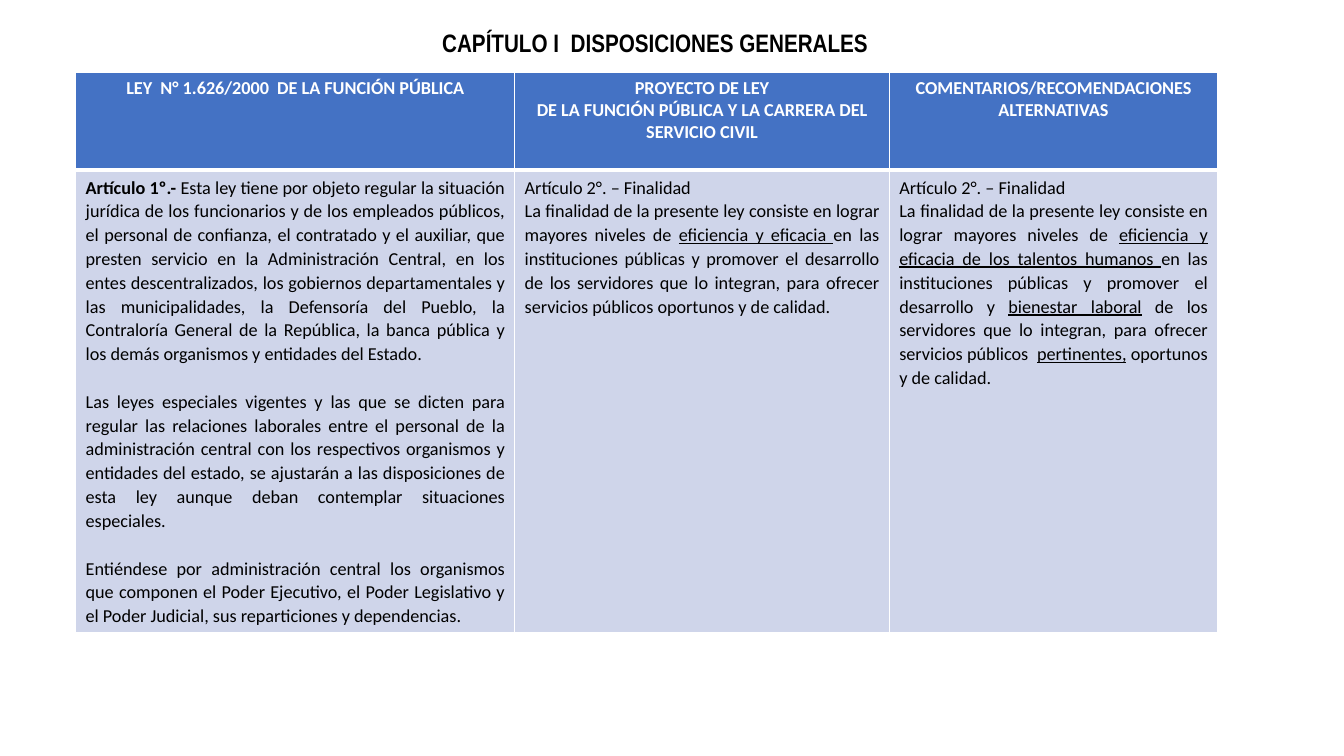
from dataclasses import dataclass

from lxml.etree import SubElement
from pptx import Presentation
from pptx.dml.color import RGBColor
from pptx.enum.text import MSO_ANCHOR as Anchor, PP_ALIGN as Align
from pptx.oxml.ns import qn
from pptx.util import Pt


@dataclass(frozen=True)
class Theme:
    """Colours, fonts and type sizes of the slide."""
    black: str = "000000"
    white: str = "FFFFFF"
    header_fill: str = "4472C4"
    body_fill: str = "CFD5EA"
    title_font: str = "Arial Narrow"
    table_font: str = "Calibri"
    title_size: int = 18
    table_size: int = 13
    line_spacing: int = 17


THEME = Theme()
PLAIN, BOLD, UNDERLINE = "plain", "bold", "underline"

TITLE = "CAPÍTULO I  DISPOSICIONES GENERALES"
COLUMN_WIDTHS = (313.6, 267.6, 234.6)
ROW_HEIGHTS = (70, 330)

HEADERS = (
    ("LEY  N° 1.626/2000  DE LA FUNCIÓN PÚBLICA",),
    ("PROYECTO DE LEY", "DE LA FUNCIÓN PÚBLICA Y LA CARRERA DEL SERVICIO CIVIL"),
    ("COMENTARIOS/RECOMENDACIONES ALTERNATIVAS",),
)

ARTICLE_HEADING = [("Artículo 2°. – Finalidad", PLAIN)]
PURPOSE_START = ("La finalidad de la presente ley consiste en lograr mayores niveles de ", PLAIN)

CURRENT_LAW = (
    [
        ("Artículo 1º.-", BOLD),
        (" Esta ley tiene por objeto regular la situación jurídica de los funcionarios y de los "
         "empleados públicos, el personal de confianza, el contratado y el auxiliar, que presten "
         "servicio en la Administración Central, en los entes descentralizados, los gobiernos "
         "departamentales y las municipalidades, la Defensoría del Pueblo, la Contraloría General "
         "de la República, la banca pública y los demás organismos y entidades del Estado.", PLAIN),
    ],
    [("Las leyes especiales vigentes y las que se dicten para regular las relaciones laborales "
      "entre el personal de la administración central con los respectivos organismos y entidades "
      "del estado, se ajustarán a las disposiciones de esta ley aunque deban contemplar "
      "situaciones especiales.", PLAIN)],
    [("Entiéndese por administración central los organismos que componen el Poder Ejecutivo, el "
      "Poder Legislativo y el Poder Judicial, sus reparticiones y dependencias.", PLAIN)],
)
BILL = (
    ARTICLE_HEADING,
    [
        PURPOSE_START,
        ("eficiencia y eficacia ", UNDERLINE),
        ("en las instituciones públicas y promover el desarrollo de los servidores que lo "
         "integran, para ofrecer servicios públicos oportunos y de calidad.", PLAIN),
    ],
)
COMMENTS = (
    ARTICLE_HEADING,
    [
        PURPOSE_START,
        ("eficiencia y eficacia de los talentos humanos ", UNDERLINE),
        ("en las instituciones públicas y promover el desarrollo y ", PLAIN),
        ("bienestar laboral", UNDERLINE),
        (" de los servidores que lo integran, para ofrecer servicios públicos  ", PLAIN),
        ("pertinentes,", UNDERLINE),
        (" oportunos y de calidad.", PLAIN),
    ],
)
BODIES = ((CURRENT_LAW, THEME.line_spacing), (BILL, 0), (COMMENTS, 0))


def format_run(run, font_name, size, color, bold=False, underline=False):
    """Set the font of one run."""
    font = run.font
    font.name, font.size = font_name, Pt(size)
    font.bold, font.underline = bold, underline
    font.color.rgb = RGBColor.from_string(color)


def add_title(slide):
    """Place and format the title placeholder."""
    title = slide.shapes.title
    title.left, title.top, title.width, title.height = Pt(54), Pt(0), Pt(828), Pt(64)
    frame = title.text_frame
    frame.text = TITLE
    frame.vertical_anchor = Anchor.MIDDLE
    paragraph = frame.paragraphs[0]
    paragraph.alignment, paragraph.line_spacing = Align.CENTER, 0.9
    format_run(paragraph.runs[0], THEME.title_font, THEME.title_size, THEME.black, bold=True)


def style_cell(cell, fill, top, bottom):
    """Give a cell its white borders and its fill."""
    properties = cell._tc.get_or_add_tcPr()
    for side, width in (("L", 1), ("R", 1), ("T", top), ("B", bottom)):
        line = SubElement(properties, qn(f"a:ln{side}"), w=str(Pt(width)))
        SubElement(SubElement(line, qn("a:solidFill")), qn("a:srgbClr"), val=THEME.white)
    cell.fill.solid()
    cell.fill.fore_color.rgb = RGBColor.from_string(fill)


def fill_header(cell, lines):
    """Write the centred heading of a column."""
    style_cell(cell, THEME.header_fill, top=1, bottom=3)
    cell.text_frame.text = "\n".join(lines)
    for paragraph in cell.text_frame.paragraphs:
        paragraph.alignment = Align.CENTER
        format_run(paragraph.runs[0], THEME.table_font, THEME.table_size, THEME.white, bold=True)


def fill_body(cell, paragraphs, gap):
    """Write the justified paragraphs of a column."""
    style_cell(cell, THEME.body_fill, top=3, bottom=1)
    frame = cell.text_frame
    for index, pieces in enumerate(paragraphs):
        paragraph = frame.add_paragraph() if index else frame.paragraphs[0]
        paragraph.alignment = Align.JUSTIFY
        paragraph.line_spacing = Pt(THEME.line_spacing)
        paragraph.space_before = Pt(gap if index else 0)
        for text, style in pieces:
            run = paragraph.add_run()
            run.text = text
            format_run(run, THEME.table_font, THEME.table_size, THEME.black,
                       bold=style == BOLD, underline=style == UNDERLINE)


def add_comparison_table(slide):
    """Add the table that compares the law, the bill and the comments."""
    table = slide.shapes.add_table(
        len(ROW_HEIGHTS), len(COLUMN_WIDTHS), Pt(54), Pt(51.5),
        Pt(sum(COLUMN_WIDTHS)), Pt(sum(ROW_HEIGHTS))).table
    for row, height in zip(table.rows, ROW_HEIGHTS):
        row.height = Pt(height)
    for index, width in enumerate(COLUMN_WIDTHS):
        table.columns[index].width = Pt(width)
        fill_header(table.cell(0, index), HEADERS[index])
        fill_body(table.cell(1, index), *BODIES[index])


def main():
    """Build the slide and save it."""
    presentation = Presentation()
    presentation.slide_width, presentation.slide_height = Pt(960), Pt(540)
    slide = presentation.slides.add_slide(presentation.slide_layouts.get_by_name("Title Only"))
    add_title(slide)
    add_comparison_table(slide)
    presentation.save("out.pptx")


if __name__ == "__main__":
    main()
